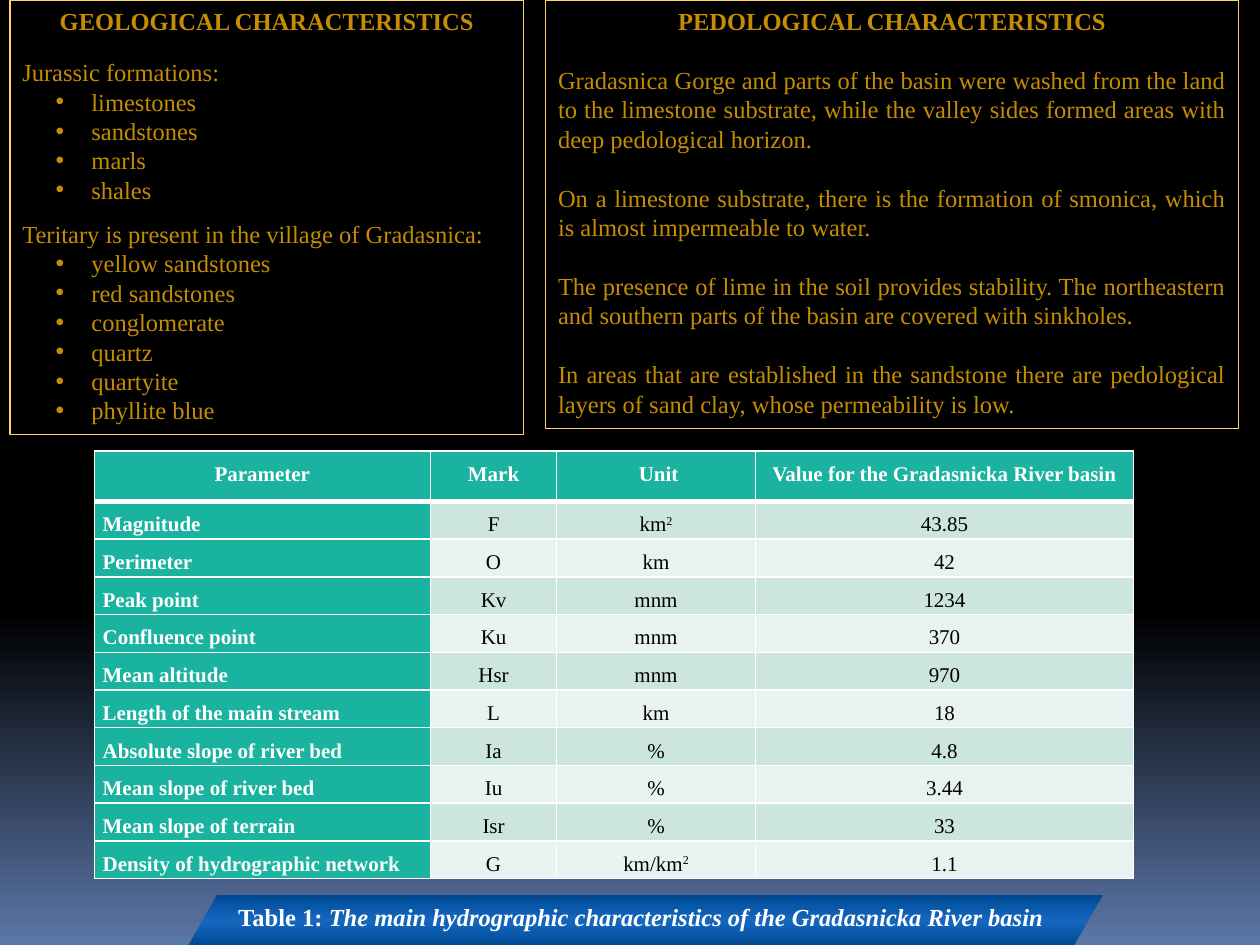
import pptx
import pptx.dml.color
import pptx.enum.shapes
import pptx.enum.text
import pptx.oxml
import pptx.util
from lxml import etree

Cm, Pt = pptx.util.Cm, pptx.util.Pt
SHAPE = pptx.enum.shapes.MSO_SHAPE
ALIGN = pptx.enum.text.PP_ALIGN
NS = "http://schemas.openxmlformats.org/drawingml/2006/main"


def color(code):
    return pptx.dml.color.RGBColor.from_string(code)


def node(text):
    """Parse a DrawingML element written with the a: prefix."""
    head, tail = text.split(" ", 1)
    return pptx.oxml.parse_xml(f'{head} xmlns:a="{NS}" {tail}')


class Slide:
    face = "Times New Roman"
    gold, edge, white, black = "C58D01", "FED46C", "FFFFFF", "000000"
    teal, bands = "1AB39F", ("CDE5DF", "E8F2F0")

    def __init__(self, deck):
        self.page = deck.slides.add_slide(deck.slide_layouts[6])
        self.shapes = self.page.shapes

    def blend(self, fill, root, stops):
        """Vertical gradient; each stop is (percent, colour, opacity)."""
        fill.gradient()
        fill.gradient_angle = 270
        items = next(root.iter(f"{{{NS}}}gsLst"))
        for old in list(items):
            items.remove(old)
        for pos, code, alpha in stops:
            items.append(node(
                f'<a:gs pos="{pos * 1000}"><a:srgbClr val="{code}">'
                f'<a:alpha val="{alpha * 1000}"/></a:srgbClr></a:gs>'))

    def style(self, para, size, code, bold=False, align=ALIGN.LEFT):
        font = para.font
        font.name, font.size, font.bold = self.face, Pt(size), bold
        font.color.rgb = color(code)
        para.alignment = align

    def bullet(self, para):
        props = para._p.get_or_add_pPr()
        props.set("marL", str(Cm(1.27)))
        props.set("indent", str(Cm(-0.6)))
        mark = node('<a:buChar char="•"/>')
        face = node('<a:buFont typeface="Arial"/>')
        font = props.find(f"{{{NS}}}defRPr")
        font.addprevious(face)
        font.addprevious(mark)

    def panel(self, box, title, parts, align):
        """Framed text; each part is (gap before, text, bullet items)."""
        shape = self.shapes.add_shape(SHAPE.RECTANGLE, *map(Cm, box))
        shape.shadow.inherit = False
        shape.fill.background()
        shape.line.color.rgb = color(self.edge)
        shape.line.width = Pt(0.75)
        frame = shape.text_frame
        frame.word_wrap = True
        frame.vertical_anchor = pptx.enum.text.MSO_ANCHOR.TOP
        para = frame.paragraphs[0]
        para.text = title
        self.style(para, 14, self.gold, True, ALIGN.CENTER)
        for gap, text, items in parts:
            para = frame.add_paragraph()
            para.text = text
            para.space_before = Pt(gap)
            self.style(para, 14, self.gold, align=align)
            for item in items:
                para = frame.add_paragraph()
                para.text = " " + item
                para.level = 1
                self.style(para, 14, self.gold)
                self.bullet(para)

    def border(self, cell, top, base):
        props = cell._tc.get_or_add_tcPr()
        sides = (("L", 1), ("R", 1), ("T", top), ("B", base))
        for i, (side, width) in enumerate(sides):
            props.insert(i, node(
                f'<a:ln{side} w="{Pt(width)}"><a:solidFill><a:srgbClr '
                f'val="{self.white}"/></a:solidFill></a:ln{side}>'))

    def cell(self, cell, text, row, col):
        lead = row == 0 or col == 0
        cell.fill.solid()
        cell.fill.fore_color.rgb = color(
            self.teal if lead else self.bands[(row - 1) % 2])
        self.border(cell, 3 if row == 1 else 1, 3 if row == 0 else 1)
        cell.margin_left = cell.margin_right = Cm(0.17)
        cell.margin_top = cell.margin_bottom = 0
        para = cell.text_frame.paragraphs[0]
        para.line_spacing = 1.5
        base, power, upper = text.partition("^")
        para.add_run().text = base
        if power:
            run = para.add_run()
            run.text = upper
            run._r.get_or_add_rPr().set("baseline", "30000")
        self.style(para, 12, self.white if lead else self.black, lead,
                   ALIGN.LEFT if col == 0 and row else ALIGN.CENTER)

    def table(self, left, top, wide, high, rows):
        grid = self.shapes.add_table(
            len(rows), len(wide), Cm(left), Cm(top),
            Cm(sum(wide)), Cm(sum(high))).table
        for col, width in zip(grid.columns, wide):
            col.width = Cm(width)
        for line, height in zip(grid.rows, high):
            line.height = Cm(height)
        for r, row in enumerate(rows):
            for c, text in enumerate(row):
                self.cell(grid.cell(r, c), text, r, c)

    def banner(self, box, area, label, text):
        group = self.shapes.add_group_shape().shapes
        plate = group.add_shape(SHAPE.PARALLELOGRAM, *map(Cm, box))
        plate.adjustments[0] = 0.58
        plate.shadow.inherit = False
        plate.line.fill.background()
        self.blend(plate.fill, plate.element, (
            (0, "004992", 100), (50, "0066CC", 74), (100, "004992", 100)))
        frame = group.add_textbox(*map(Cm, area)).text_frame
        frame.word_wrap = True
        para = frame.paragraphs[0]
        para.add_run().text = label
        run = para.add_run()
        run.text = text
        run.font.italic = True
        self.style(para, 14, self.white, True, ALIGN.CENTER)


def main():
    deck = pptx.Presentation()
    deck.slide_width, deck.slide_height = Cm(25.4), Cm(19.05)
    slide = Slide(deck)

    # Background
    page = slide.page
    slide.blend(page.background.fill, page.element, (
        (0, "000000", 100), (65, "000000", 100), (100, "5B77A8", 100)))

    # Text panels
    slide.panel((0.2, 0, 10.36, 8.76), "GEOLOGICAL CHARACTERISTICS", (
        (12.3, "Jurassic formations:",
         ("limestones", "sandstones", "marls", "shales")),
        (8.4, "Teritary is present in the village of Gradasnica:",
         ("yellow sandstones", "red sandstones", "conglomerate",
          "quartz", "quartyite", "phyllite blue"))), ALIGN.LEFT)
    soils = (
        "Gradasnica Gorge and parts of the basin were washed from the land "
        "to the limestone substrate, while the valley sides formed areas "
        "with deep pedological horizon.",
        "On a limestone substrate, there is the formation of smonica, "
        "which is almost impermeable to water.",
        "The presence of lime in the soil provides stability. The "
        "northeastern and southern parts of the basin are covered with "
        "sinkholes.",
        "In areas that are established in the sandstone there are "
        "pedological layers of sand clay, whose permeability is low.")
    slide.panel((11, 0, 13.97, 8.64), "PEDOLOGICAL CHARACTERISTICS",
                [(16.8, text, ()) for text in soils], ALIGN.JUSTIFY)

    # Table of basin values; ^ marks a superscript
    rows = (
        ("Parameter", "Mark", " Unit",
         "Value for the Gradasnicka River basin"),
        ("Magnitude", "F", "km^2", "43.85"),
        ("Perimeter", "O", "km", "42"),
        ("Peak point", "Kv", "mnm", "1234"),
        ("Confluence point", "Ku", "mnm", "370"),
        ("Mean altitude", "Hsr", "mnm", "970"),
        ("Length of the main stream", "L", "km", "18"),
        ("Absolute slope of river bed", "Iа", "%", "4.8"),
        ("Mean slope of river bed", "Iu", "%", "3.44"),
        ("Mean slope of terrain", "Isr", "%", "33"),
        ("Density of hydrographic network", "G", "km/km^2", "1.1"))
    slide.table(1.9, 9.09, (6.78, 2.54, 4.01, 7.62),
                [1.02] + [0.76] * (len(rows) - 1), rows)

    # Caption
    slide.banner((3.81, 18.06, 18.42, 0.99), (4.01, 18.06, 17.83, 0.86),
                 "Table 1: ", "The main hydrographic characteristics of "
                 "the Gradasnicka River basin")

    deck.save("out.pptx")


if __name__ == "__main__":
    main()
